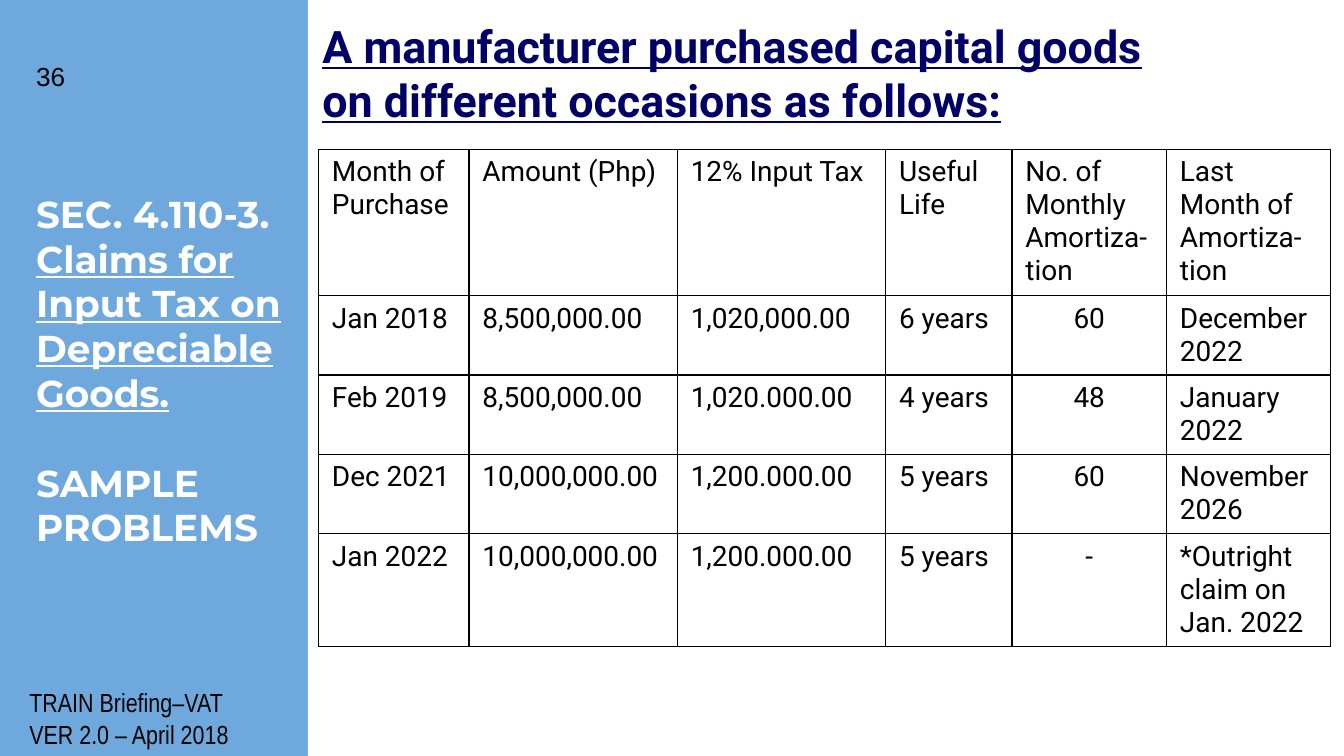
from lxml.etree import SubElement
from pptx import Presentation
from pptx.dml.color import RGBColor
from pptx.enum.shapes import MSO_SHAPE as Shape
from pptx.enum.text import PP_ALIGN as Align
from pptx.oxml.ns import qn
from pptx.util import Inches, Pt

BLUE = RGBColor(0x6F, 0xA8, 0xDC)
NAVY = RGBColor(0x00, 0x00, 0x66)
WHITE = RGBColor(0xFF, 0xFF, 0xFF)
BLACK = RGBColor(0x00, 0x00, 0x00)

WIDTH = 10
HEIGHT = WIDTH * 9 / 16
SIDEBAR = 2.29

# Each paragraph is a list of (words, underlined) runs
PAGE_NUMBER = [[("36", False)]]
SECTION = [
    [("SEC. 4.110-3. ", False),
     ("Claims for Input Tax on Depreciable Goods.", True)],
    [("SAMPLE", False)],
    [("PROBLEMS", False)],
]
HEADING = [[("A manufacturer purchased capital goods on different occasions "
             "as follows:", True)]]
FOOTER = [[("TRAIN Briefing–VAT", False)], [("VER 2.0 – April 2018", False)]]

PURCHASES = [
    ("Month of Purchase", "Amount (Php)", "12% Input Tax", "Useful Life",
     "No. of Monthly Amortiza-tion", "Last Month of Amortiza-tion"),
    ("Jan 2018", "8,500,000.00", "1,020,000.00", "6 years", "60", "December 2022"),
    ("Feb 2019", "8,500,000.00", "1,020.000.00", "4 years", "48", "January 2022"),
    ("Dec 2021", "10,000,000.00", "1,200.000.00", "5 years", "60", "November 2026"),
    ("Jan 2022", "10,000,000.00", "1,200.000.00", "5 years", "-",
     "*Outright claim on Jan. 2022"),
]
COLUMN_WIDTHS = [1.12, 1.55, 1.55, 0.94, 1.15, 1.22]
ROW_HEIGHT = 0.41
AMORTIZATION_COLUMN = 4


def write(frame, paragraphs, *, font, size, color=BLACK, bold=False,
          align=Align.LEFT, gaps=()):
    """Fill a text frame; gaps maps paragraph numbers to space before."""
    frame.word_wrap = True
    space_before = dict(gaps)
    for number, runs in enumerate(paragraphs):
        paragraph = frame.add_paragraph() if number else frame.paragraphs[0]
        paragraph.alignment = align
        if number in space_before:
            paragraph.space_before = Pt(space_before[number])
        for words, underlined in runs:
            run = paragraph.add_run()
            run.text = words
            run.font.name, run.font.size = font, Pt(size)
            run.font.bold, run.font.underline = bold, underlined
            run.font.color.rgb = color


def add_text(slide, box, paragraphs, inset=None, **text_format):
    frame = slide.shapes.add_textbox(*map(Inches, box)).text_frame
    if inset is not None:
        frame.margin_left = frame.margin_right = Inches(inset)
        frame.margin_top = frame.margin_bottom = Inches(inset)
    write(frame, paragraphs, **text_format)


def outline(cell):
    properties = cell._tc.get_or_add_tcPr()
    for position, side in enumerate(("lnL", "lnR", "lnT", "lnB")):
        line = SubElement(properties, qn(f"a:{side}"), w=str(Pt(0.75)))
        fill = SubElement(line, qn("a:solidFill"))
        SubElement(fill, qn("a:srgbClr"), val=str(BLACK))
        properties.insert(position, line)


def add_purchases(slide, left, top):
    table = slide.shapes.add_table(
        len(PURCHASES), len(COLUMN_WIDTHS), Inches(left), Inches(top),
        Inches(sum(COLUMN_WIDTHS)), Inches(ROW_HEIGHT * len(PURCHASES))).table
    table.first_row = table.horz_banding = False
    for column, width in zip(table.columns, COLUMN_WIDTHS):
        column.width = Inches(width)
    for r, purchase in enumerate(PURCHASES):
        for c, words in enumerate(purchase):
            cell = table.cell(r, c)
            cell.margin_bottom = Inches(0.04)
            cell.fill.background()
            outline(cell)
            centred = r > 0 and c == AMORTIZATION_COLUMN
            write(cell.text_frame, [[(words, False)]], font="Roboto", size=15,
                  align=Align.CENTER if centred else Align.LEFT)


def main():
    deck = Presentation()
    deck.slide_width, deck.slide_height = Inches(WIDTH), Inches(HEIGHT)
    slide = deck.slides.add_slide(deck.slide_layouts[6])
    slide.background.fill.solid()
    slide.background.fill.fore_color.rgb = BLUE

    panel = slide.shapes.add_shape(
        Shape.RECTANGLE, Inches(SIDEBAR), 0,
        Inches(WIDTH - SIDEBAR), Inches(HEIGHT))
    panel.shadow.inherit = False
    panel.fill.solid()
    panel.fill.fore_color.rgb = WHITE
    panel.line.fill.background()

    add_text(slide, (0.12, 5.06, 2.54, 0.57), FOOTER,
             font="Arial Narrow", size=14, align=Align.JUSTIFY)
    add_text(slide, (0.17, 1.32, 2.03, 2.95), SECTION, inset=0.1,
             font="Montserrat", size=20, color=WHITE, bold=True, gaps={1: 24})
    add_text(slide, (0.17, 0.35, 0.5, 0.43), PAGE_NUMBER, inset=0.1,
             font="Arial", size=14)
    add_text(slide, (2.3, 0.09, 6.74, 1.02), HEADING,
             font="Roboto", size=24, color=NAVY, bold=True)
    add_purchases(slide, 2.37, 1.11)
    deck.save("out.pptx")


if __name__ == "__main__":
    main()
